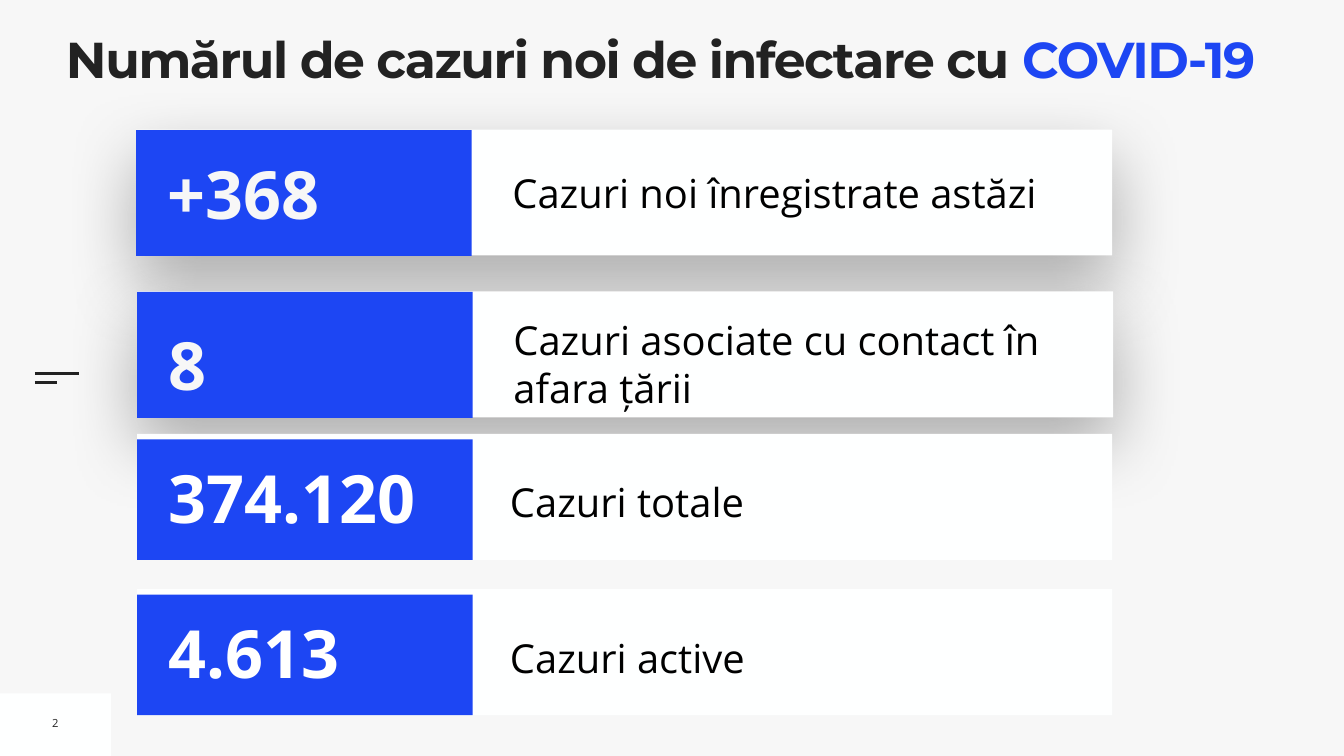
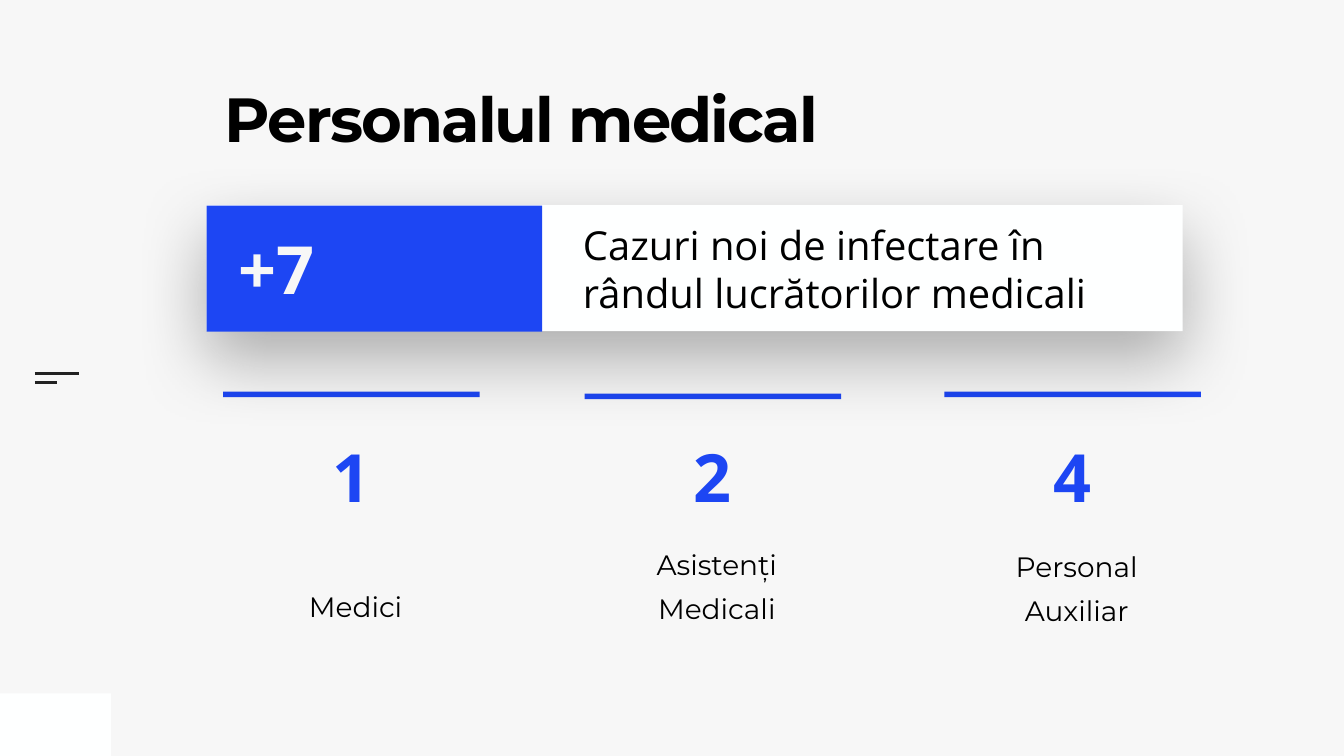
"""Build two slides on daily COVID-19 cases and infected medical staff."""
from lxml.etree import SubElement
from pptx import Presentation
from pptx.dml.color import RGBColor
from pptx.enum.shapes import MSO_CONNECTOR, MSO_SHAPE
from pptx.enum.text import MSO_ANCHOR, PP_ALIGN
from pptx.oxml.ns import qn
from pptx.util import Emu, Pt

PX = 9144
W, H = 2667, 1500
COLORS = {"back": "F7F7F7", "card": "FEFFFF", "blue": "1D46F3",
          "ink": "222222", "black": "000000", "white": "FFFFFF"}
HEAD, BODY = "Montserrat", "Open Sans"

CASES_TITLE = [("Numărul de cazuri noi de infectare cu ", "ink"), ("COVID-19", "blue")]
CASES = [
    dict(x=270, y=257, number="+368", label="Cazuri noi înregistrate astăzi", label_h=116),
    dict(x=272, y=578, number="8", label="Cazuri asociate cu contact în afara țării",
         label_h=212, drop=19),
    dict(x=272, y=861, number="374.120", label="Cazuri totale", label_h=112, raised=False),
    dict(x=272, y=1169, number="4.613", label="Cazuri active", label_h=125, raised=False),
]
STAFF_TITLE = [("Personalul medical", "black")]
STAFF_TOTAL = dict(x=410, y=407, number="+7", label_h=212,
                   label="Cazuri noi de infectare în rândul lucrătorilor medicali")
STAFF = [
    dict(x=443, tile_y=777, bar_y=777, number="1", label="Medici"),
    dict(x=1160, tile_y=781, bar_y=781, number="2", label="Asistenți Medicali"),
    dict(x=1874, tile_y=785, bar_y=777, number="4", label="Personal Auxiliar"),
]

CARD_H, NUMBER_H, COLUMN_W = 250, 180, 509


def px(*values):
    return [Emu(v * PX) for v in values]


def rgb(name):
    return RGBColor.from_string(COLORS[name])


def add_rect(shapes, x, y, w, h, color):
    sp = shapes.add_shape(MSO_SHAPE.RECTANGLE, *px(x, y, w, h))
    sp.shadow.inherit = False
    sp.fill.solid()
    sp.fill.fore_color.rgb = rgb(color)
    sp.line.fill.background()
    return sp


def cast_shadow(sp):
    effects = sp._element.spPr.find(qn("a:effectLst"))
    shadow = SubElement(effects, qn("a:outerShdw"), blurRad=str(Pt(100)), dist=str(Pt(40)),
                        dir="5400000", rotWithShape="0")
    color = SubElement(shadow, qn("a:srgbClr"), val=COLORS["black"])
    SubElement(color, qn("a:alpha"), val="30000")


def write(sp, runs, size, font=BODY, bold=False, align=PP_ALIGN.LEFT, anchor=MSO_ANCHOR.MIDDLE,
          inset=(10, 10, 10, 10), line=None, before=None, tracking=None, wrap=True):
    tf = sp.text_frame
    tf.word_wrap = wrap
    tf.vertical_anchor = anchor
    tf.margin_left, tf.margin_top, tf.margin_right, tf.margin_bottom = px(*inset)
    p = tf.paragraphs[0]
    p.alignment = align
    if line:
        p.line_spacing = line
    if before:
        p.space_before = Pt(before)
    for text, color in runs:
        r = p.add_run()
        r.text = text
        r.font.size, r.font.name, r.font.bold = Pt(size), font, bold
        r.font.color.rgb = rgb(color)
        if tracking:
            r._r.get_or_add_rPr().set("spc", str(tracking))


def add_text(shapes, x, y, w, h, runs, size, **style):
    write(shapes.add_textbox(*px(x, y, w, h)), runs, size, **style)


def add_title(s, x, y, w, h, runs, size, tracking):
    add_text(s.shapes, x, y, w, h, runs, size, font=HEAD, bold=True, anchor=MSO_ANCHOR.TOP,
             inset=(0, 0, 0, 0), line=0.8, tracking=tracking)


def add_number(shapes, x, y, w, text, color, align=PP_ALIGN.LEFT):
    add_text(shapes, x, y, w, NUMBER_H, [(text, color)], 95, bold=True, align=align)


def add_card(s, x, y, number, label, label_h, drop=0, raised=True):
    shapes = s.shapes.add_group_shape().shapes
    card = add_rect(shapes, x, y, 1937 if raised else 1935, CARD_H, "card")
    middle = y + CARD_H // 2 + drop
    label_runs = [(label, "black")]
    if raised:
        cast_shadow(card)
        add_rect(shapes, x, y + 1, 666, CARD_H, "blue")
        add_text(shapes, x + 737, middle - label_h // 2, 1176, label_h, label_runs, 57)
    else:
        add_rect(shapes, x, y + 11, 666, CARD_H - 11, "blue")
        add_text(shapes, x + 740, middle - 5 - label_h // 2, 1158, label_h, label_runs, 57,
                 inset=(0, 0, 0, 0), line=1.3, before=20)
    add_number(shapes, x + 53, middle - NUMBER_H // 2, 603, number,
               "back" if raised else "white")


def add_staff_tile(s, person):
    shapes = s.shapes.add_group_shape().shapes
    tile = add_rect(shapes, person["x"], person["tile_y"], COLUMN_W, 546, "back")
    write(tile, [(person["label"], "black")], 40, font=HEAD, align=PP_ALIGN.CENTER,
          anchor=MSO_ANCHOR.BOTTOM, inset=(55, 71, 39, 87), line=1.3, before=20)
    add_rect(shapes, person["x"], person["bar_y"], COLUMN_W, 11, "blue")


def add_slide(prs):
    s = prs.slides.add_slide(prs.slide_layouts[6])
    s.background.fill.solid()
    s.background.fill.fore_color.rgb = rgb("back")
    add_rect(s.shapes, 0, 1376, 220, 124, "card")
    for y, end in ((741, 157), (759, 113)):
        c = s.shapes.add_connector(MSO_CONNECTOR.STRAIGHT, *px(69, y, end, y))
        c.line.color.rgb = rgb("ink")
        c.line.width = Pt(3)
        SubElement(c._element.spPr, qn("a:effectLst"))
    return s


def build_cases(prs):
    s = add_slide(prs)
    add_text(s.shapes, 93, 1409, 34, 51, [("2", "ink")], 16, align=PP_ALIGN.CENTER, wrap=False)
    add_title(s, 131, 78, 2394, 158, CASES_TITLE, 72, -200)
    for case in CASES:
        add_card(s, **case)


def build_staff(prs):
    s = add_slide(prs)
    for person in STAFF:
        add_staff_tile(s, person)
    add_title(s, 446, 187, 1301, 273, STAFF_TITLE, 89, -270)
    add_card(s, **STAFF_TOTAL)
    for person in STAFF:
        add_number(s.shapes, person["x"], 854, COLUMN_W, person["number"], "blue",
                   PP_ALIGN.CENTER)


def main():
    prs = Presentation()
    prs.slide_width, prs.slide_height = px(W, H)
    build_cases(prs)
    build_staff(prs)
    prs.save("out.pptx")


if __name__ == "__main__":
    main()
